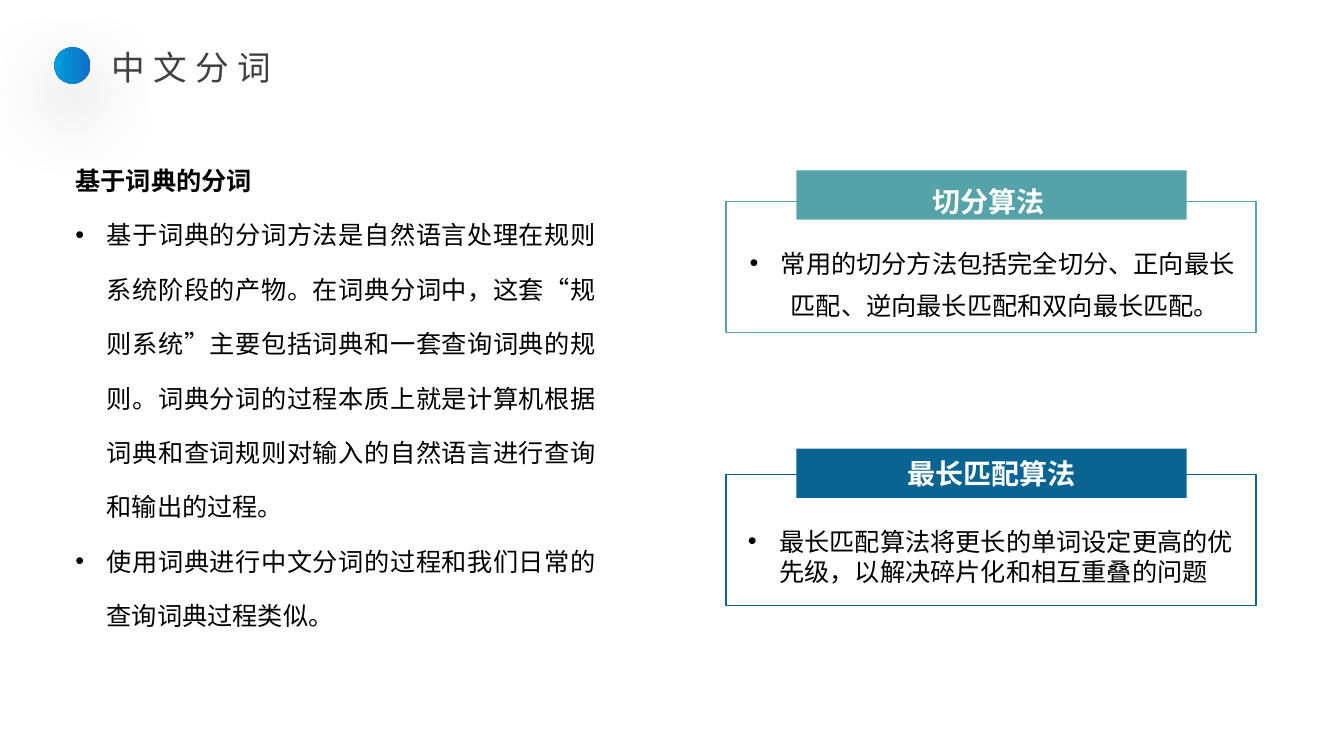
from lxml.etree import SubElement
from pptx import Presentation
from pptx.dml.color import RGBColor
from pptx.enum.shapes import MSO_SHAPE
from pptx.enum.text import MSO_ANCHOR, MSO_AUTO_SIZE, PP_ALIGN
from pptx.oxml.ns import qn
from pptx.util import Pt

PX = 9144  # 100 px to the inch
FONT = "Noto Sans CJK SC"
COLORS = {
    "title": "404040", "text": "000000", "white": "FFFFFF",
    "teal": "55A3A8", "navy": "096492",
    "dot_right": "0F6FC6", "dot_left": "009DD9",
}


def color(name):
    return RGBColor.from_string(COLORS[name])


def write(paragraph, text, size=18, ink="text", bold=False, align=PP_ALIGN.LEFT,
          line_spacing=1.0, bullet=False, tracking=0):
    """Fill a paragraph with one formatted run."""
    paragraph.alignment = align
    paragraph.line_spacing = line_spacing
    properties = paragraph._p.get_or_add_pPr()
    if bullet:
        properties.set("marL", str(31 * PX))
        properties.set("indent", str(-31 * PX))
        SubElement(properties, qn("a:buFont")).set("typeface", "Arial")
        SubElement(properties, qn("a:buChar")).set("char", "•")
    run = paragraph.add_run()
    run.text = text
    run.font.size = Pt(size)
    run.font.bold = bold
    run.font.color.rgb = color(ink)
    run.font.name = FONT
    run_properties = run._r.get_or_add_rPr()
    SubElement(run_properties, qn("a:ea")).set("typeface", FONT)
    if tracking:
        run_properties.set("spc", str(tracking * 100))


presentation = Presentation()
presentation.slide_width = 1333 * PX
presentation.slide_height = 750 * PX
slide = presentation.slides.add_slide(presentation.slide_layouts[5])
shapes = slide.shapes

# Title
title = shapes.title
title.left, title.top, title.width, title.height = 101 * PX, 42 * PX, 677 * PX, 50 * PX
title.text_frame.word_wrap = True
title.text_frame.auto_size = MSO_AUTO_SIZE.NONE
title.text_frame.vertical_anchor = MSO_ANCHOR.TOP
write(title.text_frame.paragraphs[0], "中文分词", size=24, ink="title",
      align=PP_ALIGN.JUSTIFY, tracking=6)

# Gradient dot with a soft shadow below it
dot = shapes.add_shape(MSO_SHAPE.OVAL, 54 * PX, 47 * PX, 36 * PX, 36 * PX)
dot.line.fill.background()
dot.fill.gradient()
dot.fill.gradient_angle = 180
for stop, name in zip(dot.fill.gradient_stops, ("dot_right", "dot_left")):
    stop.color.rgb = color(name)
dot.shadow.inherit = False
effects = dot._element.spPr.find(qn("a:effectLst"))
shadow = SubElement(effects, qn("a:outerShdw"), blurRad=str(Pt(60)), dist=str(Pt(20)),
                    dir="5400000", algn="t", rotWithShape="0")
shadow_color = SubElement(shadow, qn("a:srgbClr"), val=COLORS["text"])
SubElement(shadow_color, qn("a:alpha"), val="40000")

# Dictionary-based segmentation on the left
body = shapes.add_textbox(65 * PX, 135 * PX, 536 * PX, 500 * PX).text_frame
body.word_wrap = True
write(body.paragraphs[0], "基于词典的分词", bold=True, align=PP_ALIGN.JUSTIFY, line_spacing=1.8)
for text in (
    "基于词典的分词方法是自然语言处理在规则系统阶段的产物。在词典分词中，这套“规则系统”"
    "主要包括词典和一套查询词典的规则。词典分词的过程本质上就是计算机根据词典和查词规则"
    "对输入的自然语言进行查询和输出的过程。 ",
    "使用词典进行中文分词的过程和我们日常的查询词典过程类似。",
):
    write(body.add_paragraph(), text, align=PP_ALIGN.JUSTIFY, line_spacing=1.8, bullet=True)

# Algorithm cards: frame, banner and bulleted text
cards = [
    # ink, frame top, banner top, text top, text height, spacing, alignment, heading, text
    ("teal", 200, 169, 229, 84, 1.4, PP_ALIGN.CENTER, "切分算法 ",
     "常用的切分方法包括完全切分、正向最长匹配、逆向最长匹配和双向最长匹配。 "),
    ("navy", 471, 445, 517, 74, 1.0, PP_ALIGN.LEFT, "最长匹配算法",
     "最长匹配算法将更长的单词设定更高的优先级，以解决碎片化和相互重叠的问题"),
]
for ink, frame_top, banner_top, text_top, text_height, spacing, align, heading, text in cards:
    frame = shapes.add_shape(MSO_SHAPE.RECTANGLE, 720 * PX, frame_top * PX, 526 * PX, 130 * PX)
    frame.shadow.inherit = False
    frame.fill.background()
    frame.line.color.rgb = color(ink)
    frame.line.width = Pt(1)

    banner = shapes.add_shape(MSO_SHAPE.RECTANGLE, 790 * PX, banner_top * PX, 387 * PX, 49 * PX)
    banner.shadow.inherit = False
    banner.fill.solid()
    banner.fill.fore_color.rgb = color(ink)
    banner.line.fill.background()
    banner.text_frame.vertical_anchor = MSO_ANCHOR.MIDDLE
    write(banner.text_frame.paragraphs[0], heading, size=20, ink="white", bold=True,
          align=PP_ALIGN.CENTER, line_spacing=spacing)

    detail = shapes.add_textbox(732 * PX, text_top * PX, 504 * PX, text_height * PX).text_frame
    detail.word_wrap = True
    write(detail.paragraphs[0], text, align=align, line_spacing=spacing, bullet=True)

presentation.save("out.pptx")
